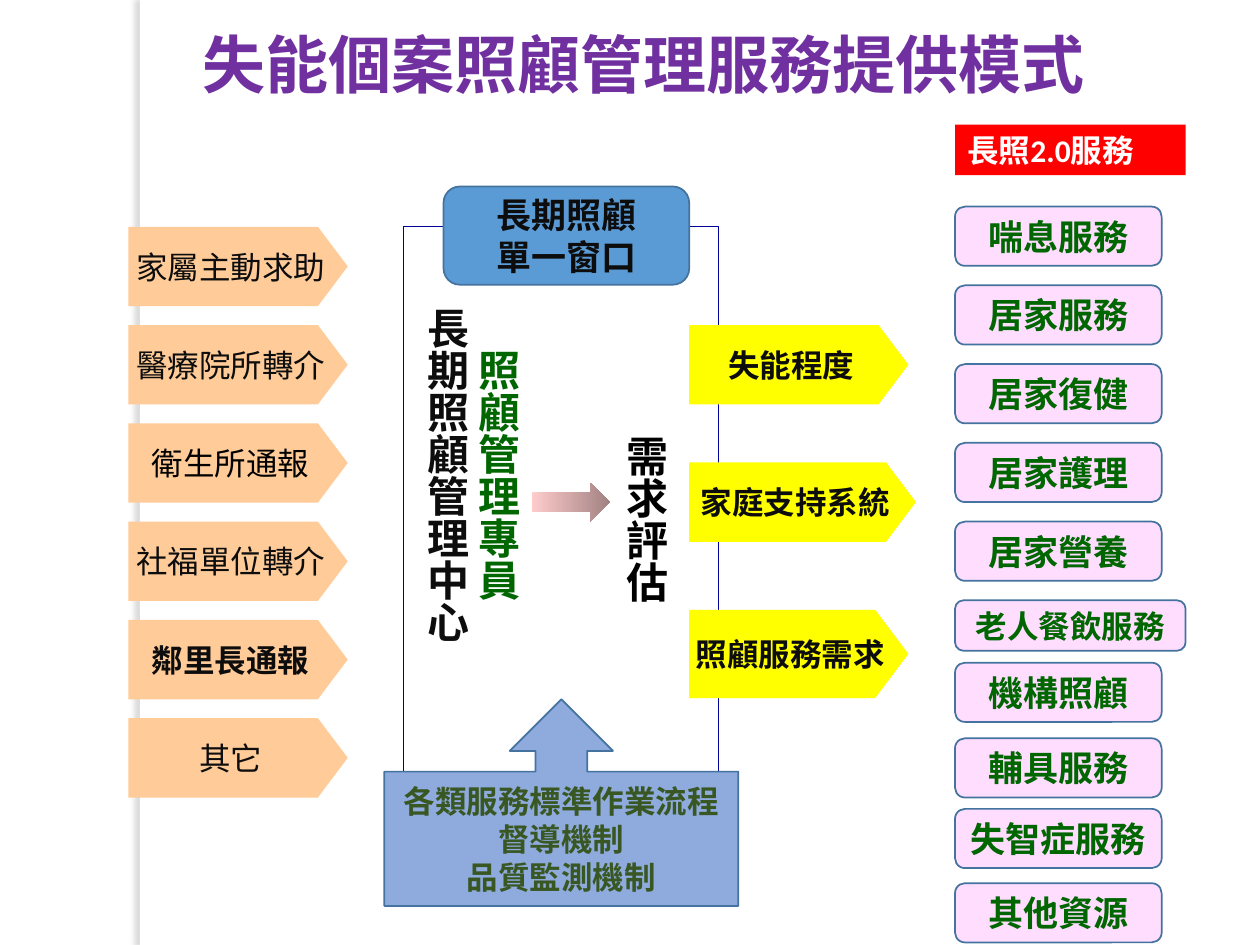
from lxml import etree
from pptx import Presentation
from pptx import util as u
from pptx.dml import color
from pptx.enum import shapes, text
from pptx.oxml import ns

KIND = shapes.MSO_SHAPE
MID = text.PP_ALIGN.CENTER
LEFT = text.PP_ALIGN.LEFT
EDGE = "43739E"
INK = "0D0D0D"
GREEN = "006600"


def tint(code):
    return color.RGBColor.from_string(code)


def place(box, x, y, w, h):
    return box[0] + x, box[1] + y, w, h


def write(frame, rows, size, inks, face="Calibri", bold=True, align=MID, **look):
    base = {"word_wrap": True, "vertical_anchor": text.MSO_ANCHOR.MIDDLE}
    for key, val in (base | look).items():
        setattr(frame, key, val)
    for i, row in enumerate(rows):
        para = frame.paragraphs[0] if i == 0 else frame.add_paragraph()
        para.alignment = align
        run = para.add_run()
        run.text = row
        font = {"name": face, "size": u.Pt(size), "bold": bold}
        for key, val in font.items():
            setattr(run.font, key, val)
        run.font.color.rgb = tint(inks[i % len(inks)])


def shape(slide, kind, box, fill=None, edge=None, width=1):
    item = slide.shapes.add_shape(kind, *map(u.Inches, box))
    item.shadow.inherit = False
    if fill:
        item.fill.solid()
        item.fill.fore_color.rgb = tint(fill)
    else:
        item.fill.background()
    if edge:
        item.line.color.rgb = tint(edge)
        item.line.width = u.Pt(width)
    else:
        item.line.fill.background()
    return item


def label(slide, box, rows, size, inks, tall=False, **look):
    item = slide.shapes.add_textbox(*map(u.Inches, box))
    look["vertical_anchor"] = text.MSO_ANCHOR.TOP
    write(item.text_frame, rows, size, inks, **look)
    if tall:
        item.text_frame._txBody.bodyPr.set("vert", "eaVert")
    return item


def strip(slide, box):
    bar = shape(slide, KIND.RECTANGLE, box, "FFFFFF")
    effects = bar._element.spPr.find(ns.qn("a:effectLst"))
    shade = etree.SubElement(effects, ns.qn("a:outerShdw"), blurRad=str(u.Pt(3)),
                             dist=str(u.Pt(3)), dir="10800000", algn="r", rotWithShape="0")
    hue = etree.SubElement(shade, ns.qn("a:srgbClr"), val="737272")
    etree.SubElement(hue, ns.qn("a:alpha"), val="25000")


def title(slide, box):
    item = label(slide, box, ["失能個案照顧管理服務提供模式"], 36, ["7030A0"],
                 face="Noto Sans CJK SC", align=LEFT)
    item.text_frame.paragraphs[0].line_spacing = 0.9


def tag(slide, box, word, fill, ink=INK, bold=True):
    item = shape(slide, KIND.PENTAGON, box, fill)
    item.adjustments[0] = 0.376
    write(item.text_frame, [word], 18, [ink], bold=bold, word_wrap=False)


def sources(slide, box):
    words = ["家屬主動求助", "醫療院所轉介", "衛生所通報", "社福單位轉介", "鄰里長通報", "其它"]
    for i, word in enumerate(words):
        tag(slide, place(box, 0, i * 0.78, box[2], 0.63), word, "FFCC99",
            "000000" if i == 2 else INK, word == "鄰里長通報")


def center(slide, box):
    shape(slide, KIND.RECTANGLE, box, None, "000099", 0.5)
    head = shape(slide, KIND.ROUNDED_RECTANGLE, place(box, 0.32, -0.32, 1.95, 0.78),
                 "5B9BD5", EDGE)
    write(head.text_frame, ["長期照顧", "單一窗口"], 20, [INK])
    grow = {"face": "Arial", "tall": True, "auto_size": text.MSO_AUTO_SIZE.SHAPE_TO_FIT_TEXT}
    label(slide, place(box, 0, 0.54, 1, 3.75), ["照顧管理專員", "長期照顧管理中心"], 24,
          [GREEN, INK], **grow)
    label(slide, place(box, 1.57, 1.56, 0.61, 1.72), ["需求評估"], 24, ["000000"],
          align=LEFT, **grow)
    arrow = shape(slide, KIND.RIGHT_ARROW, place(box, 1.02, 2.03, 0.62, 0.31))
    arrow.fill.gradient()
    arrow.fill.gradient_angle = 0
    for stop, code, spot in zip(arrow.fill.gradient_stops, ["FFCCCC", "A28282"], [0, 1]):
        stop.color.rgb = tint(code)
        stop.position = spot


def needs(slide, box):
    for word, y, w, h in [("失能程度", 0, 1.74, 0.63), ("家庭支持系統", 1.09, 1.8, 0.63),
                          ("照顧服務需求", 2.26, 1.74, 0.7)]:
        tag(slide, place(box, 0, y, w, h), word, "FFFF00")


def basis(slide, box):
    item = shape(slide, KIND.UP_ARROW_CALLOUT, box, "8FAADC", EDGE)
    write(item.text_frame, ["各類服務標準作業流程", "督導機制", "品質監測機制"], 18,
          ["385723"], face="TeX Gyre Schola")


def care(slide, box):
    head = shape(slide, KIND.RECTANGLE, place(box, 0, 0, box[2], 0.4), "FF0000")
    write(head.text_frame, ["長照2.0服務"], 18, ["FFFFFF"], align=LEFT,
          vertical_anchor=text.MSO_ANCHOR.TOP)
    words = ["喘息服務", "居家服務", "居家復健", "居家護理", "居家營養", "老人餐飲服務",
             "機構照顧", "輔具服務", "失智症服務", "其他資源"]
    tops = [0.65 + i * 0.625 for i in range(6)] + [4.27, 4.87, 5.43, 6.02]
    for word, top in zip(words, tops):
        w, h, size = (box[2], 0.4, 18) if len(word) > 5 else (1.64, 0.47, 20)
        item = shape(slide, KIND.ROUNDED_RECTANGLE, place(box, 0, top, w, h), "FFDDFF", EDGE)
        write(item.text_frame, [word], size, [GREEN])


def main():
    deck = Presentation()
    deck.slide_width, deck.slide_height = u.Inches(10), u.Inches(7.5)
    slide = deck.slides.add_slide(deck.slide_layouts[6])
    strip(slide, (1.11, 0, 0.08, 7.5))
    title(slide, (1.51, 0.22, 8.49, 0.89))
    sources(slide, (1.02, 1.8, 1.74, 4.53))
    center(slide, (3.2, 1.8, 2.5, 4.53))
    needs(slide, (5.47, 2.58, 1.8, 2.96))
    basis(slide, (3.05, 5.55, 2.81, 1.64))
    care(slide, (7.58, 0.99, 1.83, 6.49))
    deck.save("out.pptx")


if __name__ == "__main__":
    main()
